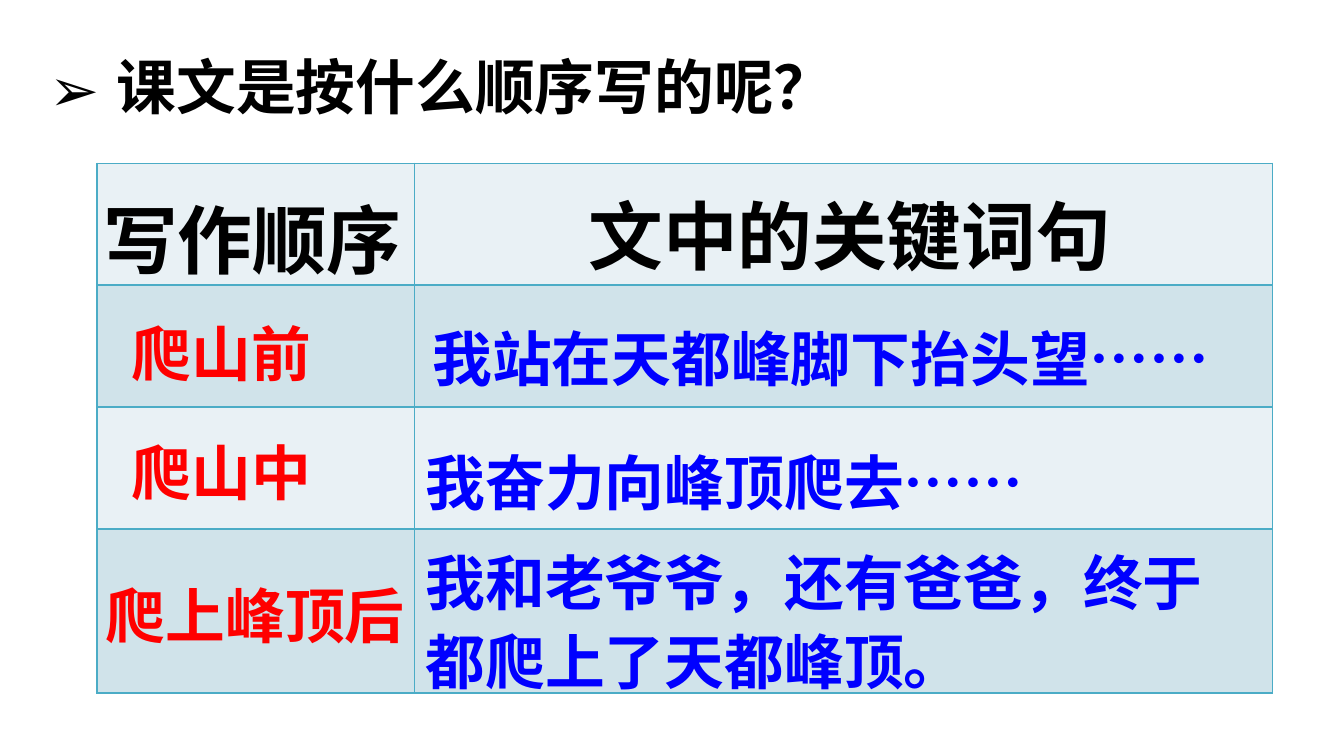
from lxml import etree
from pptx import Presentation
from pptx.dml.color import RGBColor
from pptx.enum.lang import MSO_LANGUAGE_ID
from pptx.enum.text import MSO_AUTO_SIZE, MSO_VERTICAL_ANCHOR
from pptx.oxml.ns import qn
from pptx.util import Pt

CHINESE = MSO_LANGUAGE_ID.SIMPLIFIED_CHINESE
GROW = MSO_AUTO_SIZE.SHAPE_TO_FIT_TEXT
TOP = MSO_VERTICAL_ANCHOR.TOP

THEME = {
    "font": "Noto Sans CJK SC",
    "heading": Pt(40),
    "body": Pt(32),
    "ink": RGBColor.from_string("000000"),
    "stage": RGBColor.from_string("FF0000"),
    "quote": RGBColor.from_string("0000FF"),
    "bands": [RGBColor.from_string("E9F1F5"), RGBColor.from_string("D0E3EA")],
    "border": "4BACC6",
}


def add_text(slide, text, place, size, color, spacing, bullet=None):
    frame = slide.shapes.add_textbox(*map(Pt, place)).text_frame
    for name, value in {"word_wrap": True, "auto_size": GROW, "vertical_anchor": TOP}.items():
        setattr(frame, name, value)
    paragraph = frame.paragraphs[0]
    paragraph.line_spacing = spacing
    if bullet:
        properties = paragraph._p.get_or_add_pPr()
        properties.set("marL", str(Pt(36)))
        properties.set("indent", str(-Pt(36)))
        etree.SubElement(properties, qn("a:buFont")).set("typeface", THEME["font"])
        etree.SubElement(properties, qn("a:buChar")).set("char", bullet)
    run = paragraph.add_run()
    run.text = text
    font_format = {"name": THEME["font"], "size": size, "bold": True, "language_id": CHINESE}
    for name, value in font_format.items():
        setattr(run.font, name, value)
    run.font.color.rgb = color
    east_asian = etree.SubElement(run._r.get_or_add_rPr(), qn("a:ea"))
    east_asian.set("typeface", THEME["font"])


def add_borders(cell):
    properties = cell._tc.get_or_add_tcPr()
    for side in ("lnL", "lnR", "lnT", "lnB"):
        line = etree.SubElement(properties, qn(f"a:{side}"), w=str(Pt(1)))
        fill = etree.SubElement(line, qn("a:solidFill"))
        etree.SubElement(fill, qn("a:srgbClr"), val=THEME["border"])


deck = Presentation()
deck.slide_width, deck.slide_height = Pt(720), Pt(405)
slide = deck.slides.add_slide(deck.slide_layouts[6])

column_widths = [170, 459.5]
row_heights = [65.3, 65.3, 65.3, 88]
order_table = slide.shapes.add_table(
    len(row_heights), len(column_widths), Pt(52.1), Pt(87.5),
    Pt(sum(column_widths)), Pt(sum(row_heights)),
).table
for column, width in zip(order_table.columns, column_widths):
    column.width = Pt(width)
for index, (row, height) in enumerate(zip(order_table.rows, row_heights)):
    row.height = Pt(height)
    for cell in row.cells:
        add_borders(cell)
        cell.fill.solid()
        cell.fill.fore_color.rgb = THEME["bands"][index % 2]

headings = [
    ("写作顺序", (48.2, 90.7, 221, 57.6)),
    ("文中的关键词句", (308.2, 88.6, 323.3, 65.5)),
]
stages = [
    ("爬山前", (63.4, 158.4, 221, 47.5)),
    ("爬山中", (63.4, 222.5, 221, 47.5)),
    ("爬上峰顶后", (49.7, 298.8, 221, 47.5)),
]
quotes = [
    ("我站在天都峰脚下抬头望……", (224.6, 161.3, 459.4, 47.5), 1.2),
    ("我奋力向峰顶爬去……", (221, 227.5, 459.4, 47.5), 1.2),
    ("我和老爷爷，还有爸爸，终于都爬上了天都峰顶。", (221, 285.1, 459.4, 87.1), 1.1),
]
for text, place in headings:
    add_text(slide, text, place, THEME["heading"], THEME["ink"], 1.2)
for text, place in stages:
    add_text(slide, text, place, THEME["body"], THEME["stage"], 1.2)
for text, place, spacing in quotes:
    add_text(slide, text, place, THEME["body"], THEME["quote"], spacing)
add_text(slide, "课文是按什么顺序写的呢？", (19.4, 11.5, 680.4, 50.4),
         THEME["body"], THEME["ink"], 1.3, bullet="➢")

deck.save("out.pptx")
